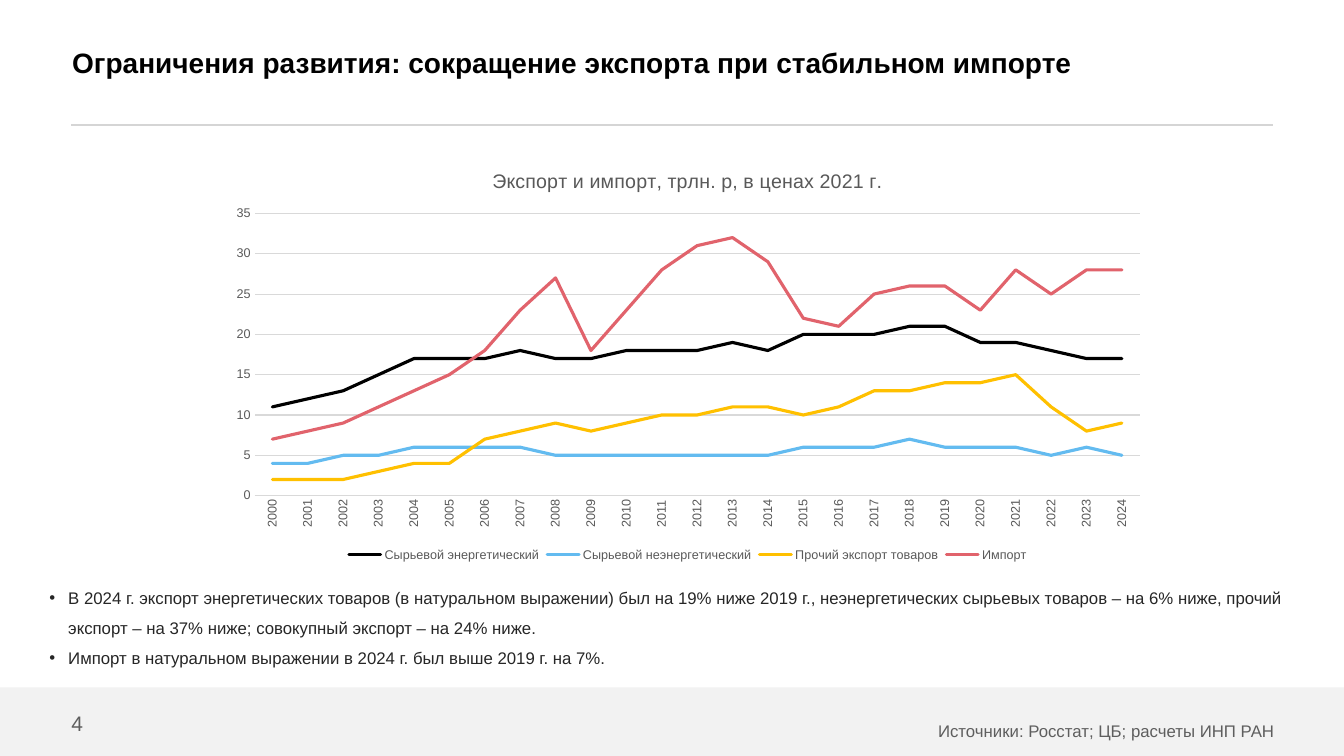
from dataclasses import dataclass

from lxml import etree
from pptx import Presentation
from pptx.chart.chart import Chart
from pptx.chart.data import CategoryChartData
from pptx.dml.color import RGBColor
from pptx.enum.chart import XL_CHART_TYPE as ChartType
from pptx.enum.chart import XL_LEGEND_POSITION as LegendPosition
from pptx.enum.chart import XL_TICK_MARK as TickMark
from pptx.enum.shapes import MSO_CONNECTOR as Connector
from pptx.enum.shapes import MSO_SHAPE as Shape
from pptx.enum.text import MSO_ANCHOR as Anchor
from pptx.enum.text import MSO_AUTO_SIZE as AutoSize
from pptx.enum.text import PP_ALIGN as Align
from pptx.oxml import parse_xml
from pptx.oxml.ns import nsdecls, qn
from pptx.util import Pt

BLACK = RGBColor(0x00, 0x00, 0x00)
INK = RGBColor(0x26, 0x26, 0x26)
GREY = RGBColor(0x5E, 0x5E, 0x5E)
CHART_GREY = RGBColor(0x59, 0x59, 0x59)
GRID = RGBColor(0xD9, 0xD9, 0xD9)
RULE = RGBColor(0xD5, 0xD5, 0xD5)
FOOTER = RGBColor(0xF2, 0xF2, 0xF2)
BLUE = RGBColor(0x63, 0xBB, 0xF0)
YELLOW = RGBColor(0xFF, 0xC0, 0x00)
RED = RGBColor(0xE1, 0x63, 0x6C)

PAGE_WIDTH, PAGE_HEIGHT = 960, 540
FONT = "Arial"
HEADING = "Ограничения развития: сокращение экспорта при стабильном импорте"
CHART_TITLE = "Экспорт и импорт, трлн. р, в ценах 2021 г."
FINDINGS = [
    "В 2024 г. экспорт энергетических товаров (в натуральном выражении) был на 19% "
    "ниже 2019 г., неэнергетических сырьевых товаров – на 6% ниже, прочий экспорт – "
    "на 37% ниже; совокупный экспорт – на 24% ниже.",
    "Импорт в натуральном выражении в 2024 г. был выше 2019 г. на 7%.",
]


@dataclass(frozen=True)
class Series:
    name: str
    color: RGBColor
    values: list[int]


@dataclass(frozen=True)
class Note:
    left: float
    top: float
    width: float
    height: float
    paragraphs: list[str]
    size: float
    color: RGBColor
    align: Align = Align.LEFT
    spacing: float = 1.0
    bulleted: bool = False
    wrap: bool = True
    anchor: Anchor = Anchor.TOP


YEARS = [str(year) for year in range(2000, 2025)]
SERIES = [
    Series("Сырьевой энергетический", BLACK,
           [11, 12, 13, 15, 17, 17, 17, 18, 17, 17, 18, 18, 18,
            19, 18, 20, 20, 20, 21, 21, 19, 19, 18, 17, 17]),
    Series("Сырьевой неэнергетический", BLUE,
           [4, 4, 5, 5, 6, 6, 6, 6, 5, 5, 5, 5, 5,
            5, 5, 6, 6, 6, 7, 6, 6, 6, 5, 6, 5]),
    Series("Прочий экспорт товаров", YELLOW,
           [2, 2, 2, 3, 4, 4, 7, 8, 9, 8, 9, 10, 10,
            11, 11, 10, 11, 13, 13, 14, 14, 15, 11, 8, 9]),
    Series("Импорт", RED,
           [7, 8, 9, 11, 13, 15, 18, 23, 27, 18, 23, 28, 31,
            32, 29, 22, 21, 25, 26, 26, 23, 28, 25, 28, 28]),
]
NOTES = [
    Note(155, 507.5, 755.5, 19.5, ["Источники: Росстат; ЦБ; расчеты ИНП РАН"], 12, GREY,
         align=Align.RIGHT, spacing=1.5),
    Note(51, 507.5, 19, 18, ["4"], 15, GREY, wrap=False, anchor=Anchor.MIDDLE),
    Note(35.25, 412.5, 908, 71.5, FINDINGS, 12, INK, spacing=1.5, bulleted=True),
]


def apply(target, values: dict) -> None:
    for name, value in values.items():
        setattr(target, name, value)


def style_font(font, size: float, color: RGBColor, bold: bool = False) -> None:
    apply(font, {"name": FONT, "size": Pt(size), "bold": bold})
    font.color.rgb = color


def style_frame(frame, anchor: Anchor, wrap: bool = True) -> None:
    margins = dict.fromkeys(
        ("margin_left", "margin_top", "margin_right", "margin_bottom"), 0)
    apply(frame, {**margins, "word_wrap": wrap, "vertical_anchor": anchor,
                  "auto_size": AutoSize.NONE})


def add_bullet(para) -> None:
    properties = para._p.get_or_add_pPr()
    properties.set("marL", str(Pt(13.5)))
    properties.set("indent", str(Pt(-13.5)))
    etree.SubElement(properties, qn("a:buFont")).set("typeface", FONT)
    etree.SubElement(properties, qn("a:buChar")).set("char", "•")


def add_note(page, note: Note) -> None:
    box = page.shapes.add_textbox(
        Pt(note.left), Pt(note.top), Pt(note.width), Pt(note.height))
    frame = box.text_frame
    style_frame(frame, note.anchor, note.wrap)
    for index, text in enumerate(note.paragraphs):
        para = frame.add_paragraph() if index else frame.paragraphs[0]
        if note.bulleted:
            add_bullet(para)
        apply(para, {"alignment": note.align, "line_spacing": note.spacing})
        span = para.add_run()
        span.text = text
        style_font(span.font, note.size, note.color)


def add_heading(page) -> None:
    title = page.shapes.title
    apply(title, {"left": Pt(51.5), "top": Pt(0), "width": Pt(737.5), "height": Pt(89.5)})
    style_frame(title.text_frame, Anchor.MIDDLE)
    para = title.text_frame.paragraphs[0]
    para.alignment = Align.LEFT
    span = para.add_run()
    span.text = HEADING
    style_font(span.font, 20, BLACK, bold=True)


def add_backdrop(page) -> None:
    """Draw the rule under the heading and the footer band."""
    rule = page.shapes.add_connector(
        Connector.STRAIGHT, Pt(51), Pt(89.25), Pt(909.5), Pt(89.25))
    rule.line.color.rgb = RULE
    rule.line.width = Pt(1.5)
    etree.SubElement(rule._element.spPr, qn("a:effectLst"))

    top = 491
    band = page.shapes.add_shape(
        Shape.RECTANGLE, 0, Pt(top), Pt(PAGE_WIDTH), Pt(PAGE_HEIGHT - top))
    band.shadow.inherit = False
    band.fill.solid()
    band.fill.fore_color.rgb = FOOTER
    band.line.fill.background()


def place_plot(chart: Chart, x: float, y: float, w: float, h: float) -> None:
    """Fix the inner plot area as fractions of the chart."""
    plot_area = chart._chartSpace.chart.plotArea
    for layout in plot_area.findall(qn("c:layout")):
        plot_area.remove(layout)
    sizes = "".join(f'<c:{key} val="{value}"/>'
                    for key, value in {"x": x, "y": y, "w": w, "h": h}.items())
    plot_area.insert(0, parse_xml(
        f'<c:layout {nsdecls("c")}><c:manualLayout><c:layoutTarget val="inner"/>'
        f'<c:xMode val="edge"/><c:yMode val="edge"/>{sizes}</c:manualLayout></c:layout>'))


def style_axes(chart: Chart) -> None:
    years, amounts = chart.category_axis, chart.value_axis
    for axis in (years, amounts):
        apply(axis, {"major_tick_mark": TickMark.NONE, "minor_tick_mark": TickMark.NONE})
        style_font(axis.tick_labels.font, 9, CHART_GREY)
    years._element.txPr.find(qn("a:bodyPr")).set("rot", "-5400000")
    apply(amounts, {"minimum_scale": 0, "maximum_scale": 35, "major_unit": 5,
                    "has_major_gridlines": True})
    apply(amounts.tick_labels, {"number_format": "0", "number_format_is_linked": False})
    amounts.format.line.fill.background()
    for line in (years.format.line, amounts.major_gridlines.format.line):
        line.color.rgb = GRID
        line.width = Pt(0.75)


def add_trade_chart(page) -> None:
    data = CategoryChartData(number_format="0")
    data.categories = YEARS
    for series in SERIES:
        data.add_series(series.name, series.values)
    chart = page.shapes.add_chart(
        ChartType.LINE, Pt(155), Pt(108), Pt(672.5), Pt(296.5), data).chart
    style_font(chart.font, 10, BLACK)
    apply(chart, {"has_title": True, "has_legend": True})
    span = chart.chart_title.text_frame.paragraphs[0].add_run()
    span.text = CHART_TITLE
    style_font(span.font, 14, CHART_GREY)
    apply(chart.legend, {"position": LegendPosition.BOTTOM, "include_in_layout": False})
    style_font(chart.legend.font, 9, CHART_GREY)
    style_axes(chart)
    place_plot(chart, 0.04, 0.15, 0.94, 0.68)
    plot = chart.plots[0]
    plot.vary_by_categories = False
    for line, series in zip(plot.series, SERIES):
        line.smooth = False
        line.format.line.color.rgb = series.color
        line.format.line.width = Pt(2.25)
        line.format.line._ln.set("cap", "rnd")


def main() -> None:
    deck = Presentation()
    apply(deck, {"slide_width": Pt(PAGE_WIDTH), "slide_height": Pt(PAGE_HEIGHT)})
    page = deck.slides.add_slide(deck.slide_layouts.get_by_name("Title Only"))
    add_backdrop(page)
    add_heading(page)
    for note in NOTES:
        add_note(page, note)
    add_trade_chart(page)
    deck.save("out.pptx")


if __name__ == "__main__":
    main()
